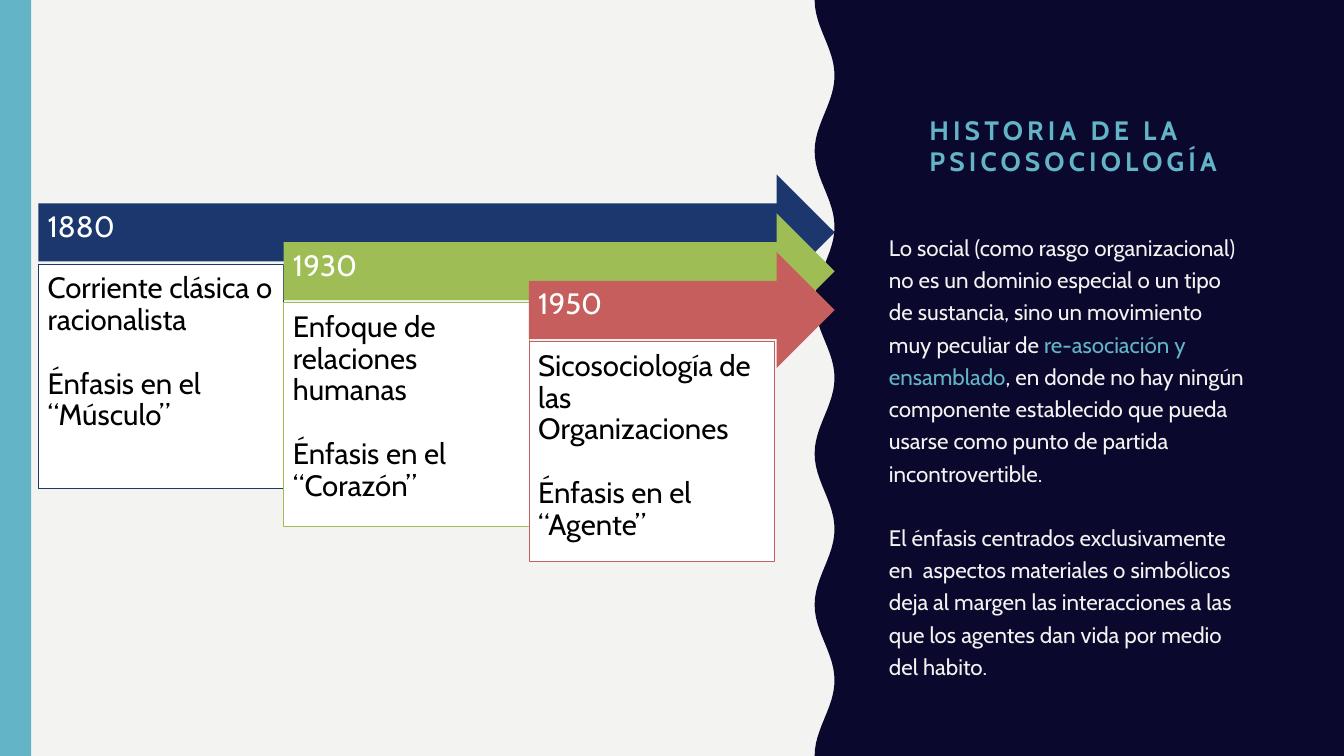
import math

from lxml import etree
from pptx import Presentation
from pptx.dml.color import RGBColor
from pptx.enum.shapes import MSO_SHAPE
from pptx.enum.text import MSO_ANCHOR, MSO_AUTO_SIZE, PP_ALIGN
from pptx.oxml.ns import qn
from pptx.util import Pt

RECTANGLE = MSO_SHAPE.RECTANGLE
RIGHT_ARROW = MSO_SHAPE.RIGHT_ARROW
TOP, MIDDLE, BOTTOM = MSO_ANCHOR.TOP, MSO_ANCHOR.MIDDLE, MSO_ANCHOR.BOTTOM

COLORS = {
    "paper": "F3F3F2", "night": "0B082E", "teal": "62B4C6",
    "navy": "1B376E", "green": "9EBE55", "red": "C65E5E",
    "white": "FFFFFF", "black": "000000",
}
WIDTH, HEIGHT = 960, 540


def color(name):
    return RGBColor.from_string(COLORS[name])


def write_text(shape, paragraphs, size, ink, bold=False, anchor=TOP,
               insets=(7.2, 3.6, 7.2, 3.6), line_spacing=1.0, gap=0):
    """Each paragraph is a list of (text, color name or None) runs."""
    frame = shape.text_frame
    frame.word_wrap = True
    frame.auto_size = MSO_AUTO_SIZE.NONE
    frame.vertical_anchor = anchor
    frame.margin_left, frame.margin_top, frame.margin_right, frame.margin_bottom = map(Pt, insets)
    for index, runs in enumerate(paragraphs):
        paragraph = frame.add_paragraph() if index else frame.paragraphs[0]
        paragraph.alignment = PP_ALIGN.LEFT
        paragraph.line_spacing = line_spacing
        paragraph.space_before = Pt(gap if index else 0)
        paragraph.space_after = Pt(0)
        for text, run_ink in runs:
            run = paragraph.add_run()
            run.text = text
            run.font.name = "Cabin"
            run.font.size = Pt(size)
            run.font.bold = bold
            run.font.color.rgb = color(run_ink or ink)


presentation = Presentation()
presentation.slide_width, presentation.slide_height = Pt(WIDTH), Pt(HEIGHT)
slide = presentation.slides.add_slide(presentation.slide_layouts[1])
slide.background.fill.solid()
slide.background.fill.fore_color.rgb = color("paper")

# Dark panel with a wavy left edge, five waves high
WAVE_CENTER, WAVE_DEPTH, WAVE_COUNT, WAVE_STEP = 589, 7.1, 5, 4.5
edge = []
for step in range(int(HEIGHT / WAVE_STEP) + 1):
    y = HEIGHT - step * WAVE_STEP
    x = WAVE_CENTER - WAVE_DEPTH * math.cos(2 * math.pi * WAVE_COUNT * y / HEIGHT)
    edge.append((Pt(x), Pt(y)))
builder = slide.shapes.build_freeform(Pt(WIDTH), Pt(0))
builder.add_line_segments([(Pt(WIDTH), Pt(HEIGHT))] + edge, close=True)
panel = builder.convert_to_shape()

# Teal strip on the left
strip = slide.shapes.add_shape(RECTANGLE, Pt(0), Pt(0), Pt(22.3), Pt(HEIGHT))
for shape, fill in ((panel, "night"), (strip, "teal")):
    shape.shadow.inherit = False
    shape.fill.solid()
    shape.fill.fore_color.rgb = color(fill)
    shape.line.fill.background()

# Timeline: staggered arrows, each with a card below
eras = [
    ("1880", "navy", "Corriente clásica o racionalista", "Énfasis en el “Músculo”", 160),
    ("1930", "green", "Enfoque de relaciones humanas", "Énfasis en el “Corazón”", 160),
    ("1950", "red", "Sicosociología de las Organizaciones", "Énfasis en el “Agente”", 157),
]
ARROW_TIP, ARROW_HEIGHT, CARD_WIDTH, CARD_DROP = 596.2, 82.8, 175.2, 64
for index, (year, accent, current, emphasis, card_height) in enumerate(eras):
    left = 27.4 + index * CARD_WIDTH
    top = 124.6 + index * 27.7
    arrow = slide.shapes.add_shape(
        RIGHT_ARROW, Pt(left), Pt(top), Pt(ARROW_TIP - left), Pt(ARROW_HEIGHT))
    card = slide.shapes.add_shape(
        RECTANGLE, Pt(left), Pt(top + CARD_DROP), Pt(CARD_WIDTH), Pt(card_height))
    for shape, fill in ((arrow, accent), (card, "white")):
        shape.shadow.inherit = False
        shape.fill.solid()
        shape.fill.fore_color.rgb = color(fill)
    arrow.line.fill.background()
    card.line.color.rgb = color(accent)
    card.line.width = Pt(0.5)
    write_text(arrow, [[(year, None)]], 21, "white", anchor=MIDDLE,
               insets=(6.6, 6.6, 20, 13.1), line_spacing=0.9)
    write_text(card, [[(current, None)], [(emphasis, None)]], 21, "black",
               insets=(6.6, 6.6, 6.6, 6.6), line_spacing=0.9, gap=22.9)

# Title and body placeholders, brought in front of the panel
title, body = slide.shapes.title, slide.placeholders[1]
for shape, box in ((title, (656.6, 36, 264.2, 94.3)), (body, (627.8, 136.8, 272.2, 327.6))):
    shape.left, shape.top, shape.width, shape.height = map(Pt, box)
    shape.element.getparent().append(shape.element)

write_text(title, [[("HISTORIA DE LA PSICOSOCIOLOGÍA", None)]], 19, "teal",
           bold=True, anchor=BOTTOM, line_spacing=0.95)
for properties in title.element.iter(qn("a:rPr")):
    properties.set("spc", "300")

write_text(body, [
    [("Lo social (como rasgo organizacional) no es un dominio especial o un tipo de "
      "sustancia, sino un movimiento muy peculiar de ", None),
     ("re-asociación y ensamblado", "teal"),
     (", en donde no hay ningún componente establecido que pueda usarse como punto de "
      "partida incontrovertible.", None)],
    [("El énfasis centrados exclusivamente en  aspectos materiales o simbólicos deja al "
      "margen las interacciones a las que los agentes dan vida por medio del habito.", None)],
], 16, "paper", insets=(7.2, 26.6, 7.2, 3.6), line_spacing=1.2, gap=23)
for properties in body.element.iter(qn("a:pPr")):
    properties.set("marL", "0")
    properties.set("indent", "0")
    etree.SubElement(properties, qn("a:buNone"))

presentation.save("out.pptx")
